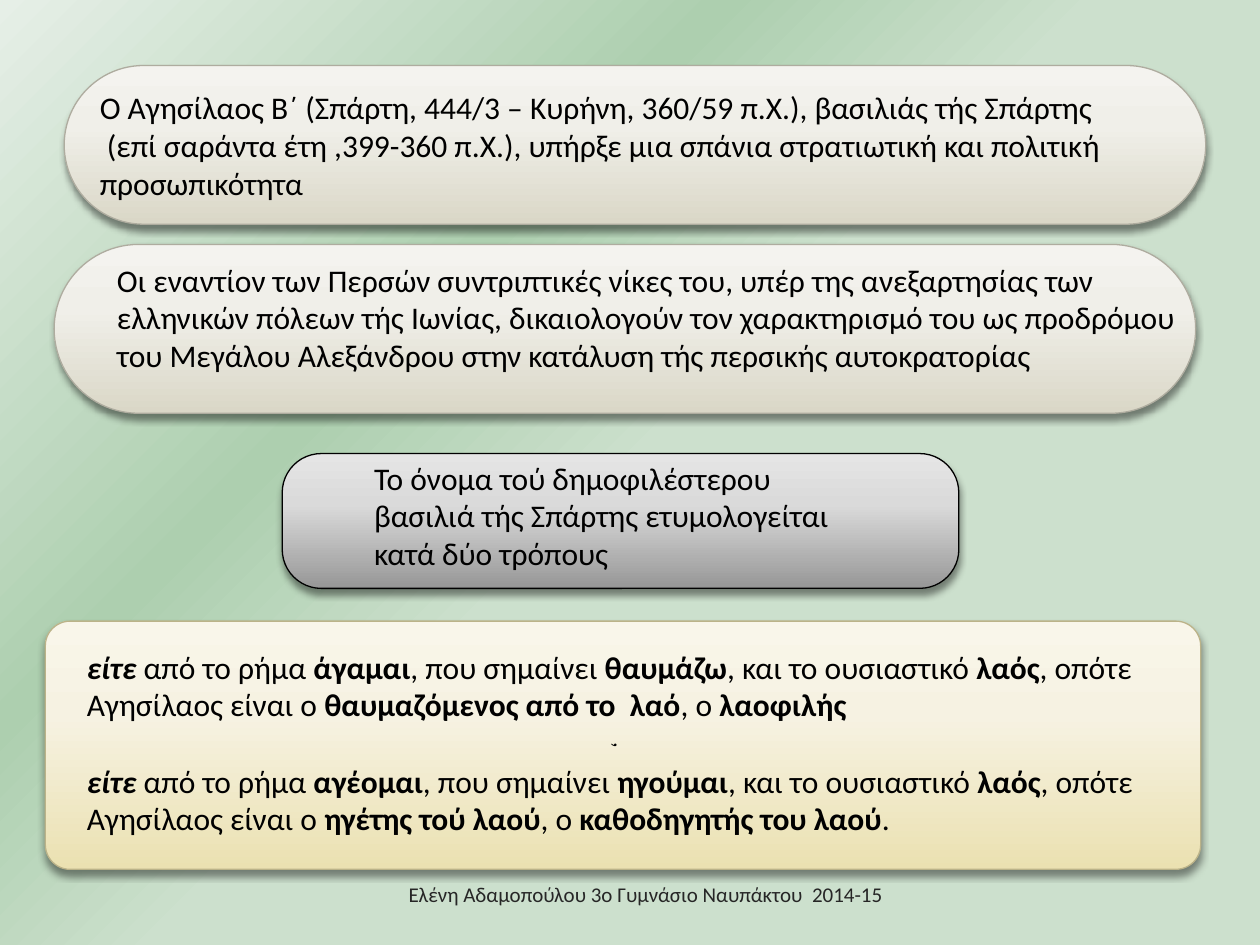
from pptx import Presentation
from pptx.dml.color import RGBColor
from pptx.enum.shapes import MSO_SHAPE
from pptx.enum.text import MSO_ANCHOR, PP_ALIGN
from pptx.oxml import parse_xml
from pptx.oxml.ns import nsdecls, qn
from pptx.util import Inches, Pt

FONT = "Calibri"
BLACK = RGBColor(0, 0, 0)
FOOTER_INK = RGBColor(0x26, 0x26, 0x26)
STONE_LINE = RGBColor(0xAE, 0xAC, 0x9F)
SAND_LINE = RGBColor(0xBB, 0xB3, 0x89)
STONE = [RGBColor(0xDA, 0xD7, 0xC7), RGBColor(0xF0, 0xEF, 0xE9), RGBColor(0xF4, 0xF3, 0xEF)]
GREY = [RGBColor(0x97, 0x97, 0x97), RGBColor(0xDA, 0xDA, 0xDA), RGBColor(0xE5, 0xE5, 0xE5)]
SAND = [RGBColor(0xEB, 0xE1, 0xB1), RGBColor(0xF6, 0xF2, 0xE2), RGBColor(0xF9, 0xF6, 0xEA)]
GREEN = [RGBColor(0xCC, 0xE0, 0xCD), RGBColor(0xAD, 0xCF, 0xAF), RGBColor(0xE6, 0xEF, 0xE7)]
UPWARD = '<a:lin ang="16200000" scaled="0"/>'
FROM_CORNER = '<a:path path="circle"><a:fillToRect l="100000" t="100000"/></a:path>'

REIGN = [
    "Ο Αγησίλαος Β΄ (Σπάρτη, 444/3 – Κυρήνη, 360/59 π.Χ.), βασιλιάς τής Σπάρτης",
    " (επί σαράντα έτη ,399-360 π.Χ.), υπήρξε μια σπάνια στρατιωτική και πολιτική προσωπικότητα",
]
VICTORIES = (
    "Οι εναντίον των Περσών συντριπτικές νίκες του, υπέρ της ανεξαρτησίας των "
    "ελληνικών πόλεων τής Ιωνίας, δικαιολογούν τον χαρακτηρισμό του ως προδρόμου "
    "του Μεγάλου Αλεξάνδρου στην κατάλυση τής περσικής αυτοκρατορίας"
)
NAME = "Το όνομα τού δημοφιλέστερου βασιλιά τής Σπάρτης ετυμολογείται κατά δύο τρόπους"
ORIGINS = [
    ("άγαμαι", "θαυμάζω", "θαυμαζόμενος από το  λαό", "λαοφιλής", ""),
    ("αγέομαι", "ηγούμαι", "ηγέτης τού λαού", "καθοδηγητής του λαού", "."),
]
FOOTER = "Ελένη Αδαμοπούλου 3ο Γυμνάσιο Ναυπάκτου  2014-15"


def set_gradient(fill, holder, positions, colors, direction):
    fill.gradient()
    stops = "".join(
        f'<a:gs pos="{position * 1000}"><a:srgbClr val="{color}"/></a:gs>'
        for position, color in zip(positions, colors)
    )
    gradient = parse_xml(
        f'<a:gradFill {nsdecls("a")} rotWithShape="1"><a:gsLst>{stops}</a:gsLst>{direction}</a:gradFill>'
    )
    holder.replace(holder.find(qn("a:gradFill")), gradient)


def add_panel(page, box, roundness, colors, line_color):
    panel = page.shapes.add_shape(MSO_SHAPE.ROUNDED_RECTANGLE, *map(Inches, box))
    panel.adjustments[0] = roundness
    properties = panel._element.spPr
    set_gradient(panel.fill, properties, [0, 62, 100], colors, UPWARD)
    panel.line.color.rgb = line_color
    panel.line.width = Pt(0.75)
    properties.append(parse_xml(
        f'<a:effectLst {nsdecls("a")}><a:outerShdw blurRad="{Pt(4)}" dist="{Pt(3)}" dir="5400000" '
        'rotWithShape="0"><a:srgbClr val="000000"><a:alpha val="43000"/></a:srgbClr>'
        '</a:outerShdw></a:effectLst>'
    ))
    return panel


def write(frame, lines, size=18, color=BLACK, align=PP_ALIGN.LEFT, anchor=MSO_ANCHOR.TOP):
    frame.word_wrap = True
    frame.vertical_anchor = anchor
    for index, line in enumerate(lines):
        para = frame.paragraphs[0] if index == 0 else frame.add_paragraph()
        para.alignment = align
        para.font.name = FONT
        para.font.size = Pt(size)
        para.font.color.rgb = color
        for place, words in enumerate([line] if isinstance(line, str) else line):
            span = para.add_run()
            span.text = words
            if not isinstance(line, str):
                span.font.bold = place % 2 == 0
                span.font.italic = place == 0


def add_text(page, box, lines, **style):
    text_box = page.shapes.add_textbox(*map(Inches, box))
    write(text_box.text_frame, lines, **style)
    return text_box


def add_reign(page, box):
    panel = add_panel(page, box, 0.5, STONE, STONE_LINE)
    write(panel.text_frame, REIGN, anchor=MSO_ANCHOR.MIDDLE)


def add_victories(page, box):
    left, top, width, height = box
    add_panel(page, box, 0.5, STONE, STONE_LINE)
    add_text(page, (left + 0.4, top + 0.08, width - 0.4, height), [VICTORIES])


def add_name(page, box):
    left, top, width, height = box
    add_panel(page, box, 0.29, GREY, BLACK)
    add_text(page, (left + 0.63, top - 0.01, 4.02, height), [NAME])


def add_origins(page, box):
    left, top, width, height = box
    add_panel(page, box, 0.1, SAND, SAND_LINE)
    mark_size = 0.5
    mark = add_text(
        page,
        (left + (width - mark_size) / 2, top + (height - mark_size) / 2, mark_size, mark_size),
        [","], size=13, align=PP_ALIGN.CENTER, anchor=MSO_ANCHOR.MIDDLE,
    )
    mark.rotation = 90
    lines = [
        ["είτε", " από το ρήμα ", verb, ", που σημαίνει ", meaning, ", και το ουσιαστικό ", "λαός",
         ", οπότε Αγησίλαος είναι ο ", sense, ", ο ", title, ending]
        for verb, meaning, sense, title, ending in ORIGINS
    ]
    origins = add_text(page, (left + 0.23, top + 0.16, 8.82, 1.7), lines)
    origins.text_frame.paragraphs[1].space_before = Pt(22)


def main():
    deck = Presentation()
    deck.slide_width, deck.slide_height = Inches(10), Inches(7.5)
    page = deck.slides.add_slide(deck.slide_layouts[6])
    fill = page.background.fill
    fill.gradient()
    set_gradient(fill, page._element.cSld.bg.bgPr, [50, 67, 100], GREEN, FROM_CORNER)
    add_text(page, (2.17, 6.9, 5.91, 0.4), [FOOTER], size=12, color=FOOTER_INK,
             align=PP_ALIGN.CENTER, anchor=MSO_ANCHOR.MIDDLE)
    add_reign(page, (0.51, 0.52, 9.06, 1.26))
    add_victories(page, (0.43, 1.94, 9.06, 1.34))
    add_name(page, (2.24, 3.6, 5.37, 1.07))
    add_origins(page, (0.36, 4.93, 9.17, 1.97))
    deck.save("out.pptx")


if __name__ == "__main__":
    main()
